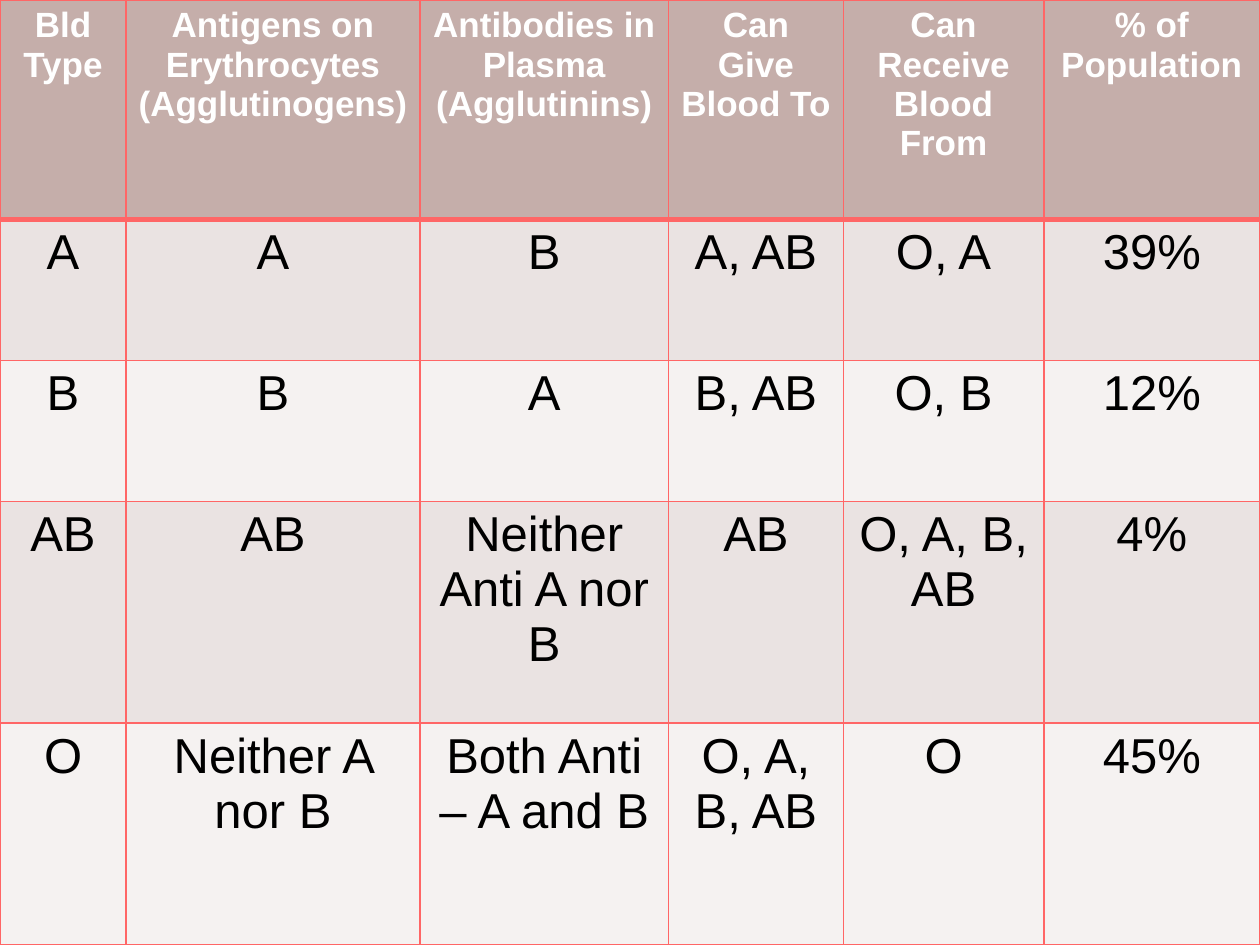
from dataclasses import dataclass

import pptx
import pptx.dml.color
import pptx.enum.text
import pptx.oxml
import pptx.oxml.ns
import pptx.table
import pptx.util

Pt = pptx.util.Pt

COLORS = {
    "rule": "FF6666",
    "header": "C5AEAA",
    "band_dark": "EAE3E2",
    "band_light": "F5F2F1",
    "header_text": "FFFFFF",
    "body_text": "000000",
}
COLUMN_WIDTHS = (72, 168, 142, 100, 114.5, 123.5)
THIN, THICK = 1, 3


@dataclass(frozen=True)
class BloodRow:
    height: float
    fill: str
    texts: tuple[str, ...]
    is_header: bool = False


BLOOD_ROWS = (
    BloodRow(125.3, "header", (
        "Bld\nType", "Antigens on Erythrocytes (Agglutinogens)",
        "Antibodies in Plasma (Agglutinins)", "Can Give Blood To",
        "Can Receive Blood From", "% of Population"), is_header=True),
    BloodRow(80.6, "band_dark", ("A", "A", "B", "A, AB", "O, A", "39%")),
    BloodRow(80.6, "band_light", ("B", "B", "A", "B, AB", "O, B", "12%")),
    BloodRow(126.75, "band_dark", (
        "AB", "AB", "Neither Anti A nor B", "AB", "O, A, B, AB", "4%")),
    BloodRow(126.75, "band_light", (
        "O", "Neither A nor B", "Both Anti – A and B", "O, A, B, AB", "O", "45%")),
)


def rgb(name: str) -> pptx.dml.color.RGBColor:
    return pptx.dml.color.RGBColor.from_string(COLORS[name])


def write_text(frame, text: str, *, size: float, color: str, bold: bool = False) -> None:
    """Fill a text frame with centred text, one paragraph per line."""
    frame.text = text
    for paragraph in frame.paragraphs:
        paragraph.alignment = pptx.enum.text.PP_ALIGN.CENTER
        for run in paragraph.runs:
            run.font.name = "Arial"
            run.font.size = Pt(size)
            run.font.bold = bold
            run.font.color.rgb = rgb(color)


def add_borders(cell: pptx.table._Cell, top: float, bottom: float) -> None:
    properties = cell._tc.get_or_add_tcPr()
    for side, width in (("L", THIN), ("R", THIN), ("T", top), ("B", bottom)):
        properties.append(pptx.oxml.parse_xml(
            f'<a:ln{side} {pptx.oxml.ns.nsdecls("a")} w="{int(Pt(width))}">'
            f'<a:solidFill><a:srgbClr val="{COLORS["rule"]}"/></a:solidFill>'
            f'</a:ln{side}>'))


def draw_row(table: pptx.table.Table, index: int, row: BloodRow) -> None:
    table.rows[index].height = Pt(row.height)
    for column, text in enumerate(row.texts):
        cell = table.cell(index, column)
        add_borders(cell, top=THICK if index == 1 else THIN,
                    bottom=THICK if row.is_header else THIN)
        cell.fill.solid()
        cell.fill.fore_color.rgb = rgb(row.fill)
        write_text(cell.text_frame, text,
                   size=20 if row.is_header else 28,
                   color="header_text" if row.is_header else "body_text",
                   bold=row.is_header)


def main() -> None:
    presentation = pptx.Presentation()
    presentation.slide_width = Pt(720)
    presentation.slide_height = Pt(540)
    slide = presentation.slides.add_slide(presentation.slide_layouts[6])
    slide.background.fill.solid()
    slide.background.fill.fore_color.rgb = rgb("rule")

    blood_types = slide.shapes.add_table(
        len(BLOOD_ROWS), len(COLUMN_WIDTHS), Pt(0), Pt(0), Pt(720), Pt(540)).table
    for column, width in zip(blood_types.columns, COLUMN_WIDTHS):
        column.width = Pt(width)
    for index, row in enumerate(BLOOD_ROWS):
        draw_row(blood_types, index, row)

    presentation.save("out.pptx")


if __name__ == "__main__":
    main()
